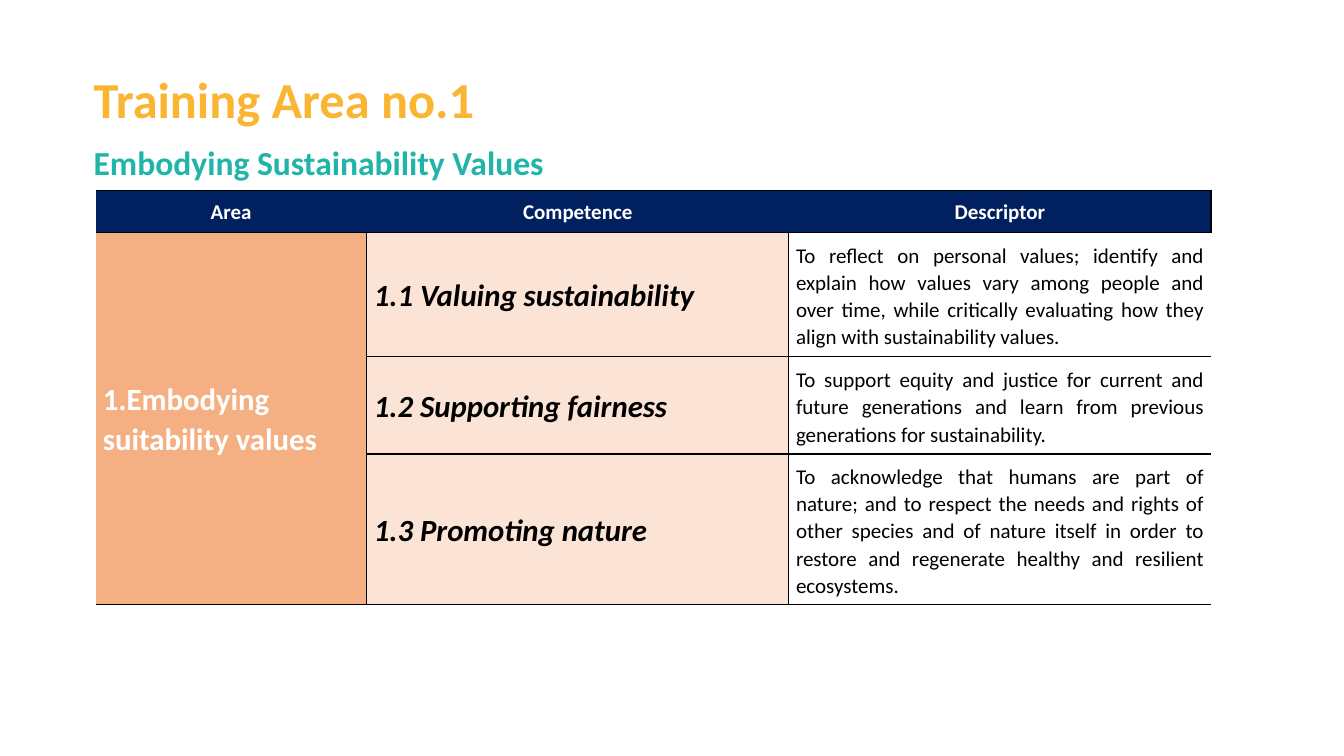
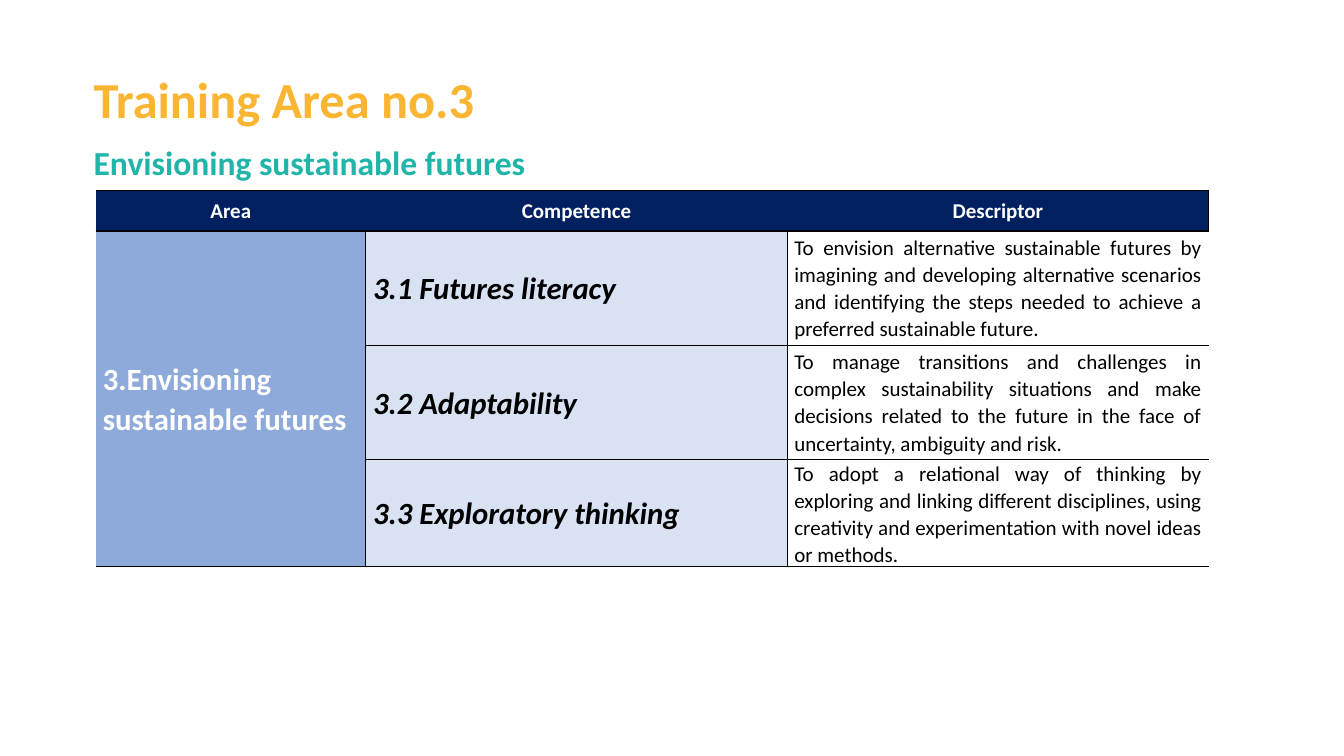
import pptx
import pptx.dml.color
import pptx.enum.text
import pptx.oxml
import pptx.util
from pptx.util import Cm, Pt

FONT = "Calibri"
GOLD, TEAL, NAVY = "FAB632", "21B4A9", "002060"
BLACK, WHITE = "000000", "FFFFFF"
ALIGN = pptx.enum.text.PP_ALIGN
HEADER = ["Area", "Competence", "Descriptor"]
HEADER_BORDERS = ["TB", "TB", "RTB"]
BODY_BORDERS = ["RTB", "LRTB", "LTB"]
TABLE_LEFT, TABLE_TOP = 2.41, 4.8


def rgb(value):
    """Return the colour for a hex string."""
    return pptx.dml.color.RGBColor.from_string(value)


def style_paragraph(p, size, color, bold=True, italic=False):
    """Set the font of a whole paragraph."""
    f = p.font
    f.name, f.size, f.bold, f.italic = FONT, Pt(size), bold, italic
    f.color.rgb = rgb(color)


def add_heading(s, text, top, height, size, color):
    """Add one heading line above the table."""
    tf = s.shapes.add_textbox(Cm(2.11), Cm(top), Cm(22.8), Cm(height)).text_frame
    tf.word_wrap = True
    tf.auto_size = pptx.enum.text.MSO_AUTO_SIZE.SHAPE_TO_FIT_TEXT
    tf.text = text
    style_paragraph(tf.paragraphs[0], size, color)


def set_borders(cell, sides):
    """Draw black lines on the named sides of a cell and none on the others."""
    tc_pr = cell._tc.get_or_add_tcPr()
    for side in "LRTB":
        ln = pptx.oxml.parse_xml(
            '<a:ln%s xmlns:a="http://schemas.openxmlformats.org/drawingml/2006/main" w="12700">'
            "%s</a:ln%s>" % (
                side,
                f'<a:solidFill><a:srgbClr val="{BLACK}"/></a:solidFill>'
                if side in sides else "<a:noFill/>",
                side))
        tc_pr.append(ln)


def format_cell(cell, sides, fill=None):
    """Set borders, fill and margins of a cell."""
    set_borders(cell, sides)
    if fill:
        cell.fill.solid()
        cell.fill.fore_color.rgb = rgb(fill)
    else:
        cell.fill.background()
    cell.margin_left = cell.margin_right = Cm(0.18)
    cell.margin_top = cell.margin_bottom = 0
    cell.vertical_anchor = pptx.enum.text.MSO_ANCHOR.MIDDLE


def write_cell(cell, text, size, color, align=ALIGN.JUSTIFY, **font):
    """Write one paragraph into a cell."""
    cell.text = text
    p = cell.text_frame.paragraphs[0]
    p.alignment, p.line_spacing = align, 1.06
    style_paragraph(p, size, color, **font)


def add_grid(s, top, widths, heights):
    """Add an unstyled table and return it."""
    tbl = s.shapes.add_table(len(heights), len(widths), Cm(TABLE_LEFT), Cm(top),
                             Cm(sum(widths)), Cm(sum(heights))).table
    tbl.first_row = tbl.horz_banding = False
    for col, width in zip(tbl.columns, widths):
        col.width = Cm(width)
    for row, height in zip(tbl.rows, heights):
        row.height = Cm(height)
    return tbl


def fill_header(tbl):
    """Fill the first row with the column names."""
    for c, (text, sides) in enumerate(zip(HEADER, HEADER_BORDERS)):
        format_cell(tbl.cell(0, c), sides, NAVY)
        write_cell(tbl.cell(0, c), text, 15, WHITE, ALIGN.CENTER)


def fill_body(tbl, first, area, competences, dark, light, space_above=0):
    """Fill the rows from first on with one area and its competences."""
    for r, (name, descriptor) in enumerate(competences, first):
        for c, fill in enumerate([dark, light, None]):
            format_cell(tbl.cell(r, c), BODY_BORDERS[c], fill)
        write_cell(tbl.cell(r, 1), name, 22, BLACK, italic=True)
        write_cell(tbl.cell(r, 2), descriptor, 15, BLACK, bold=False)
        tbl.cell(r, 2).margin_top = Cm(space_above)
    tbl.cell(first, 0).merge(tbl.cell(first + len(competences) - 1, 0))
    write_cell(tbl.cell(first, 0), area, 22, WHITE)


def add_area_slide(prs, number, subtitle):
    """Add a slide with the two headings of a training area."""
    s = prs.slides.add_slide(prs.slide_layouts[6])
    add_heading(s, f"Training Area no.{number}", 1.6, 1.8, 36, GOLD)
    add_heading(s, subtitle, 3.45, 1.27, 24, TEAL)
    return s


def add_values_slide(prs):
    """Add the slide on sustainability values."""
    s = add_area_slide(prs, 1, "Embodying Sustainability Values")
    tbl = add_grid(s, TABLE_TOP, [6.83, 10.64, 10.64], [1.06, 3.13, 2.45, 3.8])
    fill_header(tbl)
    fill_body(tbl, 1, "1.Embodying suitability values", [
        ("1.1 Valuing sustainability",
         "To reflect on personal values; identify and explain how values vary among people "
         "and over time, while critically evaluating how they align with sustainability values."),
        ("1.2 Supporting fairness",
         "To support equity and justice for current and future generations and learn from "
         "previous generations for sustainability."),
        ("1.3 Promoting nature",
         "To acknowledge that humans are part of nature; and to respect the needs and rights "
         "of other species and of nature itself in order to restore and regenerate healthy "
         "and resilient ecosystems."),
    ], "F4B083", "FBE4D5", space_above=0.08)


def add_futures_slide(prs):
    """Add the slide on sustainable futures."""
    s = add_area_slide(prs, 3, "Envisioning sustainable futures")
    widths, header_height = [6.81, 10.62, 10.62], 1.02
    fill_header(add_grid(s, TABLE_TOP, widths, [header_height]))
    tbl = add_grid(s, TABLE_TOP + header_height, widths, [2.88, 2.88, 2.16])
    fill_body(tbl, 0, "3.Envisioning sustainable futures", [
        ("3.1 Futures literacy",
         "To envision alternative sustainable futures by imagining and developing alternative "
         "scenarios and identifying the steps needed to achieve a preferred sustainable future."),
        ("3.2 Adaptability",
         "To manage transitions and challenges in complex sustainability situations and make "
         "decisions related to the future in the face of uncertainty, ambiguity and risk."),
        ("3.3 Exploratory thinking",
         "To adopt a relational way of thinking by exploring and linking different disciplines, "
         "using creativity and experimentation with novel ideas or methods."),
    ], "8EAADB", "D9E2F3")


def main():
    """Build and save the presentation."""
    prs = pptx.Presentation()
    prs.slide_width, prs.slide_height = Cm(33.87), Cm(19.05)
    add_values_slide(prs)
    add_futures_slide(prs)
    prs.save("out.pptx")


if __name__ == "__main__":
    main()
